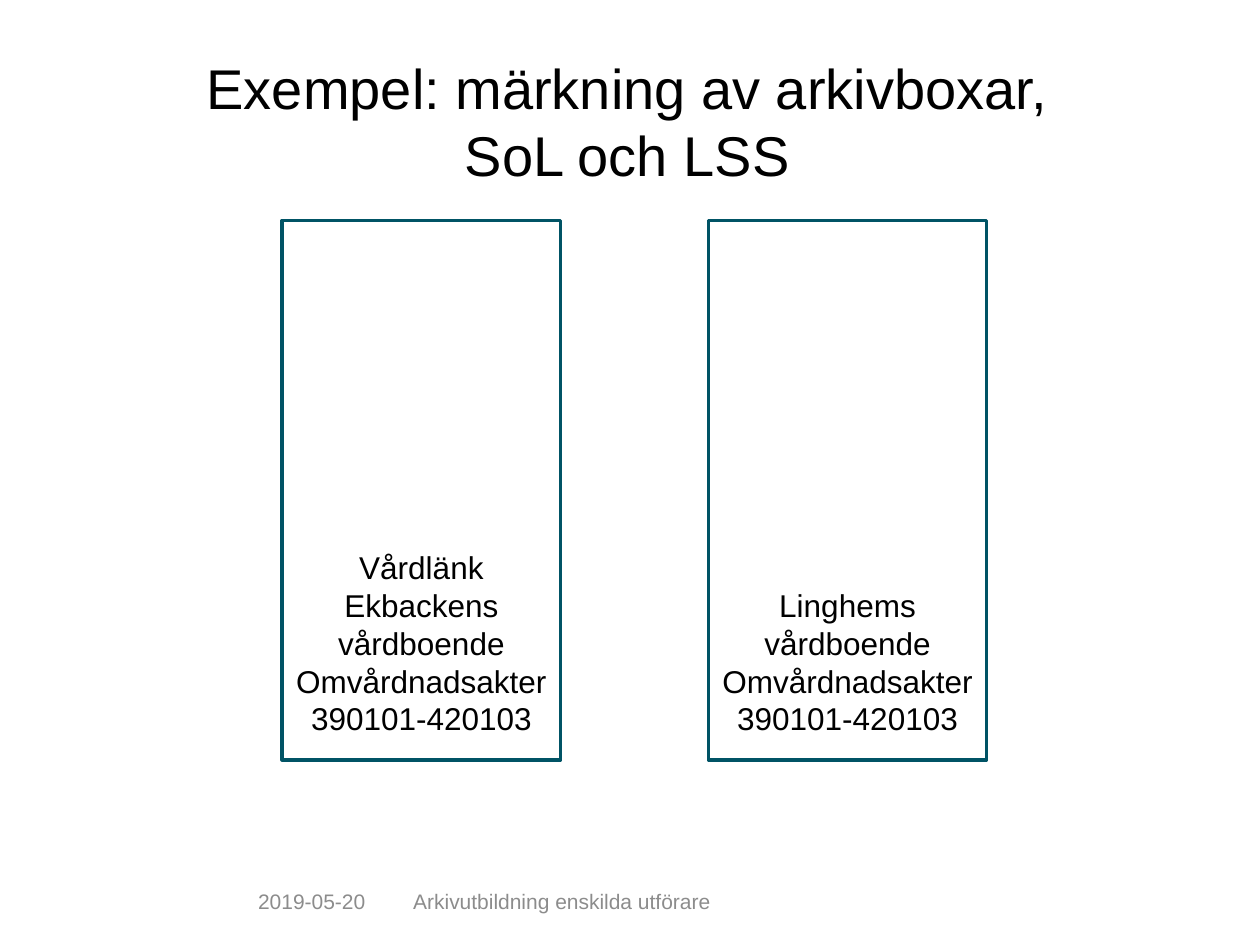
import pptx
import pptx.dml.color
import pptx.enum.shapes
import pptx.enum.text
import pptx.util

Pt = pptx.util.Pt
ALIGN = pptx.enum.text.PP_ALIGN
ANCHOR = pptx.enum.text.MSO_ANCHOR


def color(hex_string):
    return pptx.dml.color.RGBColor.from_string(hex_string)


class SlideBuilder:
    font = "Arial"
    black = "000000"
    grey = "8C8C8C"
    teal = "005365"
    white = "FFFFFF"

    def __init__(self, slide):
        self.slide = slide

    def fill_text(self, shape, lines, size, hex_color, align, line_spacing=None, **frame_format):
        """Put one paragraph per line into the shape and format its frame."""
        frame = shape.text_frame
        frame.word_wrap = True
        for name, value in frame_format.items():
            setattr(frame, name, value)
        frame.text = "\n".join(lines)
        for paragraph in frame.paragraphs:
            values = {"alignment": align, "line_spacing": line_spacing,
                      "space_before": Pt(0), "space_after": Pt(0)}
            for name, value in values.items():
                setattr(paragraph, name, value)
            for run in paragraph.runs:
                for name, value in {"name": self.font, "size": Pt(size), "bold": False}.items():
                    setattr(run.font, name, value)
                run.font.color.rgb = color(hex_color)

    def title(self, text, left, top, width, height):
        title = self.slide.shapes.title
        position = {"left": left, "top": top, "width": width, "height": height}
        for name, value in position.items():
            setattr(title, name, Pt(value))
        self.fill_text(title, [text], 32, self.black, ALIGN.CENTER, Pt(38.4),
                       vertical_anchor=ANCHOR.TOP, auto_size=pptx.enum.text.MSO_AUTO_SIZE.NONE,
                       margin_left=0, margin_top=0, margin_right=0, margin_bottom=0)

    def archive_box(self, lines, left, top, width, height):
        box = self.slide.shapes.add_shape(
            pptx.enum.shapes.MSO_SHAPE.RECTANGLE, Pt(left), Pt(top), Pt(width), Pt(height))
        box.shadow.inherit = False
        box.fill.solid()
        box.fill.fore_color.rgb = color(self.white)
        box.line.color.rgb = color(self.teal)
        box.line.width = Pt(2)
        self.fill_text(box, lines, 18, self.black, ALIGN.CENTER, Pt(21.6),
                       vertical_anchor=ANCHOR.BOTTOM, margin_left=Pt(5),
                       margin_right=Pt(5), margin_bottom=Pt(13))

    def footer(self, text, left, top, width, height):
        box = self.slide.shapes.add_textbox(Pt(left), Pt(top), Pt(width), Pt(height))
        self.fill_text(box, [text], 12, self.grey, ALIGN.LEFT, vertical_anchor=ANCHOR.MIDDLE)


def main():
    presentation = pptx.Presentation()
    presentation.slide_width = Pt(720)
    presentation.slide_height = Pt(540)
    title_only = presentation.slide_layouts[5]
    builder = SlideBuilder(presentation.slides.add_slide(title_only))

    builder.title("Exempel: märkning av arkivboxar,\vSoL och LSS", 54, 30.3, 609, 81.4)

    shared_lines = ["Omvårdnadsakter", "390101-420103"]
    box_labels = [["Vårdlänk", "Ekbackens vårdboende"], ["Linghems vårdboende"]]
    for index, label in enumerate(box_labels):
        builder.archive_box(label + shared_lines, 161.3 + index * 243.5, 126, 159, 308.3)

    builder.footer("2019-05-20", 140.4, 500.4, 88.6, 28.8)
    builder.footer("Arkivutbildning enskilda utförare", 229, 500.4, 284.4, 28.8)

    presentation.save("out.pptx")


if __name__ == "__main__":
    main()
